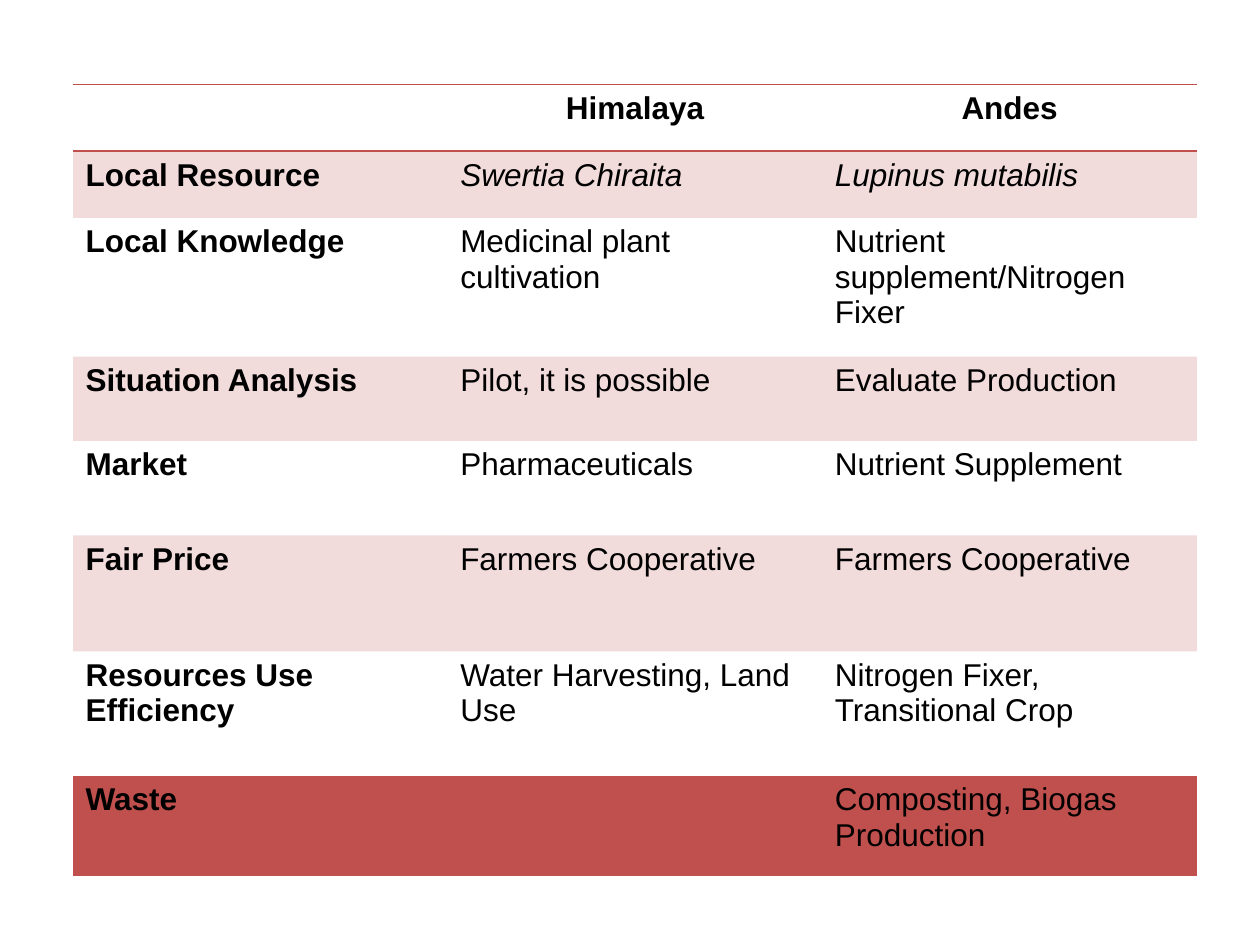
import dataclasses

import lxml.etree
import pptx
import pptx.dml.color
import pptx.enum.text
import pptx.oxml.ns
import pptx.util

Inches = pptx.util.Inches


@dataclasses.dataclass(frozen=True)
class Theme:
    """Colours, font and sizes of the slide."""
    accent: str = "C0504D"
    ink: str = "000000"
    band_opacity: int = 20
    font: str = "Arial"
    text_size: int = 18
    rule_width: int = 1
    plain_table_style: str = "{2D5ABB26-0587-4C30-8999-92F81FD0307C}"


THEME = Theme()
COMPARISON = [
    ("", "Himalaya", "Andes"),
    ("Local Resource", "Swertia Chiraita", "Lupinus mutabilis"),
    ("Local Knowledge", "Medicinal plant cultivation", "Nutrient supplement/Nitrogen Fixer"),
    ("Situation Analysis", "Pilot, it is possible", "Evaluate Production"),
    ("Market", "Pharmaceuticals", "Nutrient Supplement"),
    ("Fair Price", "Farmers Cooperative", "Farmers Cooperative"),
    ("Resources Use Efficiency", "Water Harvesting, Land Use", "Nitrogen Fixer, Transitional Crop"),
    ("Waste", "", "Composting, Biogas Production"),
]
ROW_HEIGHTS = [0.53, 0.53, 1.1, 0.67, 0.75, 0.92, 0.99, 0.79]
HEADER_ROW, SPECIES_ROW, LAST_ROW = 0, 1, len(COMPARISON) - 1


def add_child(parent, tag, **attributes):
    """Append a DrawingML element to its parent and return it."""
    return lxml.etree.SubElement(parent, pptx.oxml.ns.qn(tag), attributes)


def draw_rule(cell, tag):
    """Draw one accent-coloured border of a cell."""
    width = str(pptx.util.Pt(THEME.rule_width))
    border = add_child(cell._tc.get_or_add_tcPr(), tag, w=width)
    add_child(add_child(border, "a:solidFill"), "a:srgbClr", val=THEME.accent)


def fill_band(cell):
    """Tint a cell with the translucent accent colour."""
    cell.fill.solid()
    cell.fill.fore_color.rgb = pptx.dml.color.RGBColor.from_string(THEME.accent)
    tint = cell._tc.tcPr.find(".//" + pptx.oxml.ns.qn("a:srgbClr"))
    add_child(tint, "a:alpha", val=str(THEME.band_opacity * 1000))


def write_cell(cell, text, row, column):
    """Write the text of a cell in the style of its row and column."""
    cell.text = text
    paragraph = cell.text_frame.paragraphs[0]
    font = paragraph.font
    font.name = THEME.font
    font.size = pptx.util.Pt(THEME.text_size)
    font.color.rgb = pptx.dml.color.RGBColor.from_string(THEME.ink)
    font.bold = row == HEADER_ROW or column == 0
    font.italic = row == SPECIES_ROW and column > 0
    if row == HEADER_ROW:
        paragraph.alignment = pptx.enum.text.PP_ALIGN.CENTER


def add_comparison(slide, left, top, width):
    """Place the comparison of the two regions in the given box."""
    height = Inches(sum(ROW_HEIGHTS))
    columns = len(COMPARISON[0])
    table = slide.shapes.add_table(len(COMPARISON), columns, left, top, width, height).table
    table._tbl.tblPr.find(pptx.oxml.ns.qn("a:tableStyleId")).text = THEME.plain_table_style
    for column in table.columns:
        column.width = width // columns
    for row, (texts, row_height) in enumerate(zip(COMPARISON, ROW_HEIGHTS)):
        table.rows[row].height = Inches(row_height)
        for column, text in enumerate(texts):
            cell = table.cell(row, column)
            write_cell(cell, text, row, column)
            if row == HEADER_ROW:
                draw_rule(cell, "a:lnT")
            if row in (HEADER_ROW, LAST_ROW):
                draw_rule(cell, "a:lnB")
            if row % 2:
                fill_band(cell)


def main():
    """Build the slide and save it."""
    presentation = pptx.Presentation()
    presentation.slide_width = Inches(10)
    presentation.slide_height = Inches(7.5)
    slide = presentation.slides.add_slide(presentation.slide_layouts.get_by_name("Blank"))
    add_comparison(slide, Inches(0.58), Inches(0.67), Inches(8.92))
    presentation.save("out.pptx")


if __name__ == "__main__":
    main()
